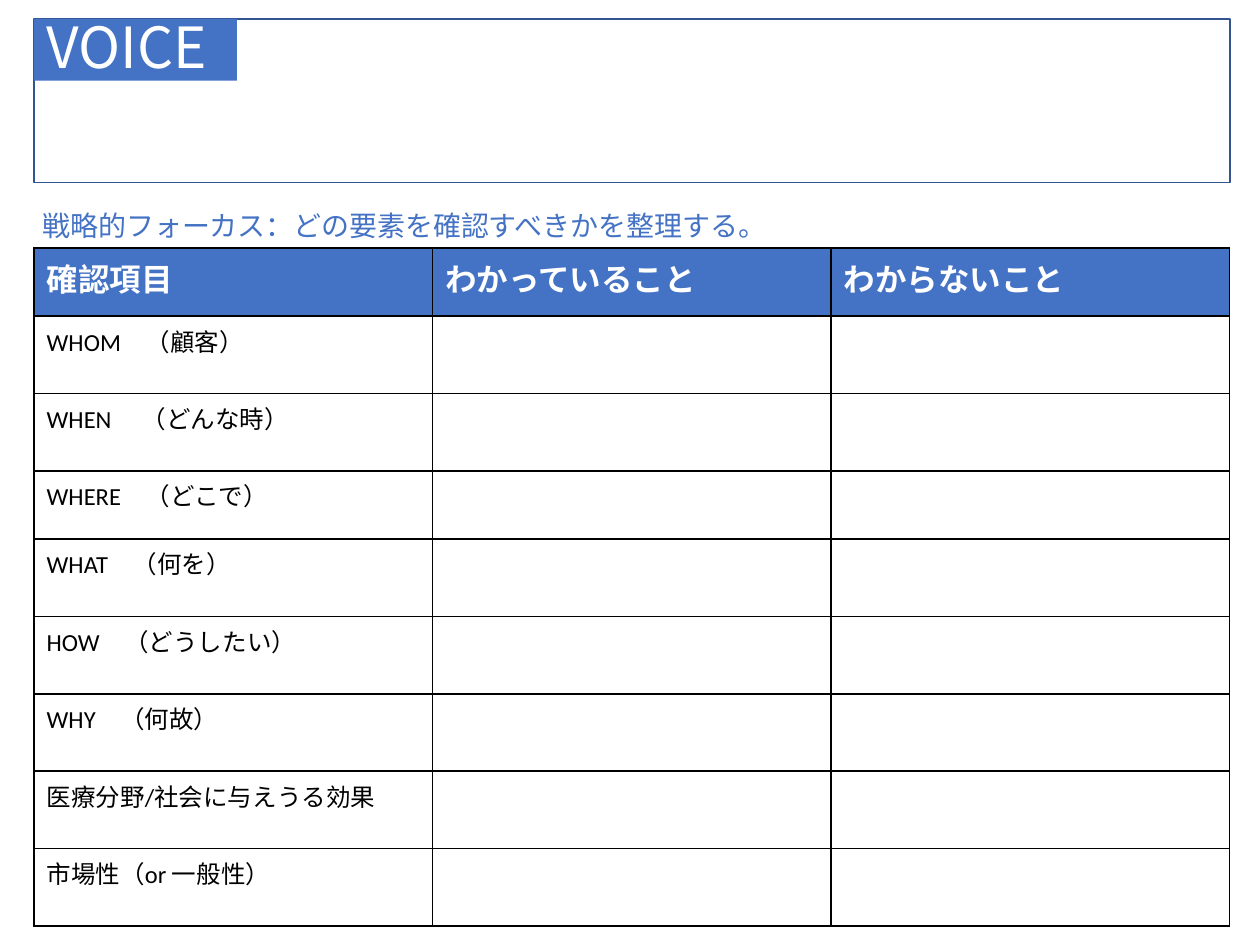
from lxml import etree
from pptx import Presentation
from pptx.dml.color import RGBColor
from pptx.enum import shapes, text
from pptx.oxml.ns import qn
from pptx.util import Inches, Pt

HUES = {"blue": "4472C4", "navy": "325491", "white": "FFFFFF", "black": "000000"}
TITLE = "VOICE"
FOCUS = "戦略的フォーカス：どの要素を確認すべきかを整理する。"
HEADS = ["確認項目", "わかっていること", "わからないこと"]
ITEMS = [
    "WHOM　（顧客）",
    "WHEN　 （どんな時）",
    "WHERE　（どこで）",
    "WHAT　（何を）",
    "HOW　（どうしたい）",
    "WHY　（何故）",
    "医療分野/社会に与えうる効果",
    "市場性（or 一般性）",
]
LEFT, WIDE = 0.27, 9.49
TOP, TALL = 1.97, 5.38
LOW = 0.54  # height of the rows in SHORT
SHORT = (0, 3)


def hue(name):
    return RGBColor.from_string(HUES[name])


def place(shape, *box):
    shape.left, shape.top, shape.width, shape.height = map(Inches, box)


def write(frame, words, size, color, face="Calibri", bold=False):
    frame.text = words
    for run in frame.paragraphs[0].runs:
        font = run.font
        font.name, font.size, font.bold = face, Pt(size), bold
        font.color.rgb = hue(color)


def edge(cell):
    """Draw a 1 pt black line on all four sides of the cell."""
    props = cell._tc.get_or_add_tcPr()
    for spot, side in enumerate(("a:lnL", "a:lnR", "a:lnT", "a:lnB")):
        line = etree.Element(qn(side), w=str(Pt(1)))
        fill = etree.SubElement(line, qn("a:solidFill"))
        etree.SubElement(fill, qn("a:srgbClr"), val=HUES["black"])
        props.insert(spot, line)


def add_grid(slide):
    rows = [HEADS] + [[item, "", ""] for item in ITEMS]
    high = (TALL - LOW * len(SHORT)) / (len(rows) - len(SHORT))
    grid = slide.shapes.add_table(
        len(rows), len(HEADS), Inches(LEFT), Inches(TOP), Inches(WIDE), Inches(TALL)
    ).table
    for col in grid.columns:
        col.width = Inches(WIDE / len(HEADS))
    for r, row in enumerate(rows):
        grid.rows[r].height = Inches(LOW if r in SHORT else high)
        for c, words in enumerate(row):
            cell = grid.cell(r, c)
            if r == 0:
                cell.fill.solid()
                cell.fill.fore_color.rgb = hue("blue")
                write(cell.text_frame, words, 18, "white", bold=True)
            else:
                cell.fill.background()
                write(cell.text_frame, words, 14, "black")
            edge(cell)


def add_focus(slide):
    box = slide.shapes.add_textbox(
        Inches(0.24), Inches(1.61), Inches(6.04), Inches(0.37))
    box.text_frame.word_wrap = False
    box.text_frame.auto_size = text.MSO_AUTO_SIZE.SHAPE_TO_FIT_TEXT
    write(box.text_frame, FOCUS, 16, "blue")


def add_voice(slide):
    frame = slide.shapes.add_shape(
        shapes.MSO_SHAPE.RECTANGLE,
        Inches(LEFT), Inches(0.15), Inches(WIDE), Inches(1.3))
    frame.shadow.inherit = False
    frame.fill.background()
    frame.line.color.rgb = hue("navy")
    frame.line.width = Pt(1)

    title = slide.shapes.title
    place(title, LEFT, 0.15, 1.61, 0.49)
    title.fill.solid()
    title.fill.fore_color.rgb = hue("blue")
    body = title.text_frame
    write(body, TITLE, 32.4, "white", "Noto Sans CJK JP")
    body.auto_size = text.MSO_AUTO_SIZE.NONE
    body.vertical_anchor = text.MSO_ANCHOR.MIDDLE
    body.paragraphs[0].alignment = text.PP_ALIGN.LEFT
    body.paragraphs[0].line_spacing = 0.9
    frame.element.addnext(title.element)  # the label lies over the frame


def main():
    deck = Presentation()
    deck.slide_width, deck.slide_height = Inches(10), Inches(7.5)
    slide = deck.slides.add_slide(deck.slide_layouts[5])
    add_focus(slide)
    add_grid(slide)
    add_voice(slide)
    deck.save("out.pptx")


if __name__ == "__main__":
    main()
